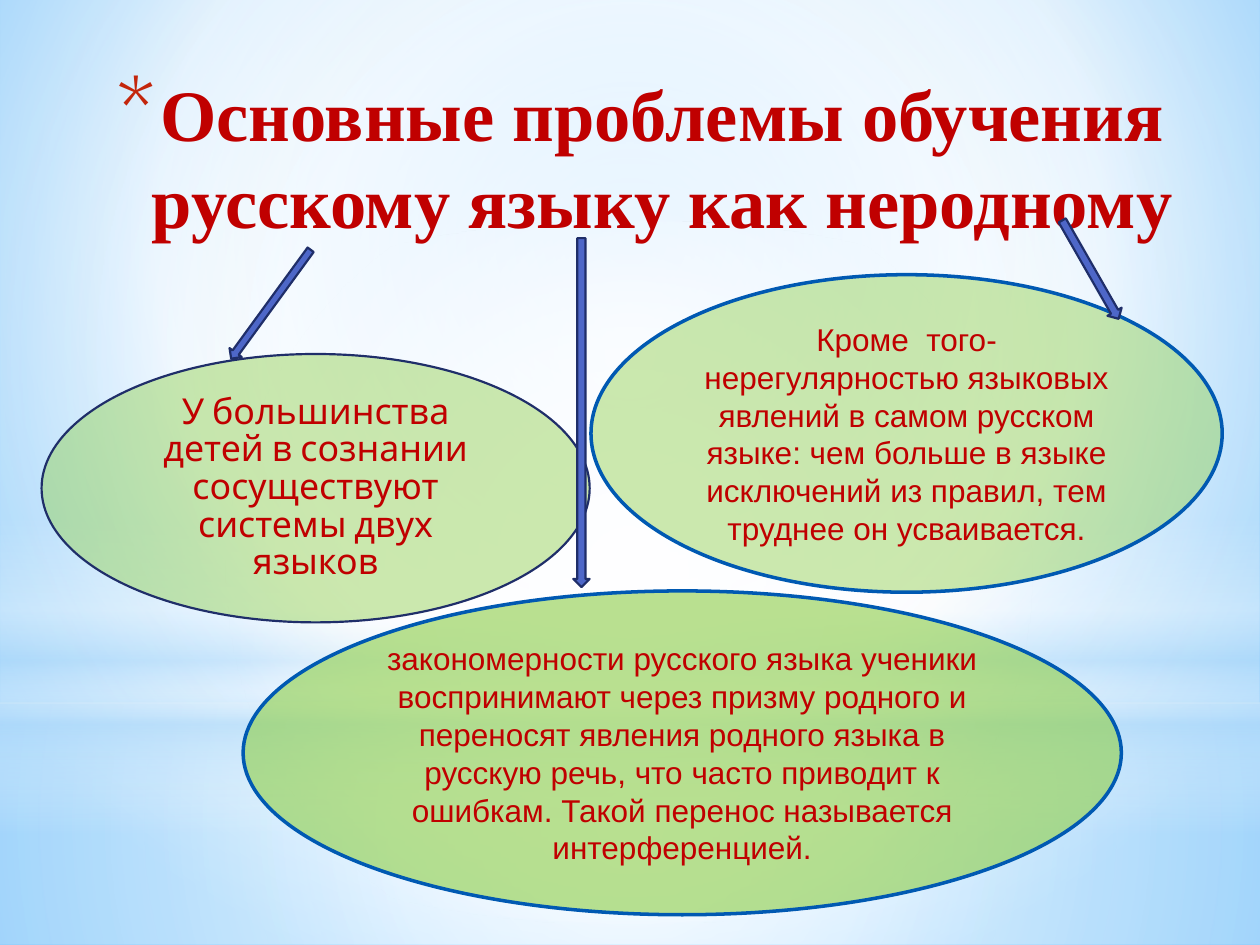
from lxml import etree
from pptx import Presentation
from pptx.dml.color import RGBColor
from pptx.enum import shapes, text
from pptx.oxml import parse_xml
from pptx.oxml.ns import nsdecls, qn
from pptx.util import Inches, Pt

RED = RGBColor(0xC0, 0x00, 0x00)
BULLET_RED = RGBColor(0xC3, 0x26, 0x0C)
GREEN = RGBColor(0x92, 0xD0, 0x50)
NAVY = RGBColor(0x1F, 0x2E, 0x69)
BLUE = RGBColor(0x00, 0x59, 0xB2)
ARROW_BLUE = RGBColor(0x4E, 0x67, 0xC8)
WHITE = RGBColor(0xFF, 0xFF, 0xFF)
PALE_BLUE = RGBColor(0xB4, 0xDC, 0xFA)
SKY = RGBColor(0x9E, 0xD5, 0xFF)
DEEP_SKY = RGBColor(0x5B, 0xB9, 0xFF)

CENTRE = (50, 50, 50, 50)
RECTANGLE = shapes.MSO_SHAPE.RECTANGLE
OVAL = shapes.MSO_SHAPE.OVAL
BACKDROP = [
    (RECTANGLE, (0, 5.58, 10, 1.92),
     [(0, WHITE, 91), (37, WHITE, 76), (100, PALE_BLUE, 79)], CENTRE),
    (RECTANGLE, (0, 0, 10, 5.58),
     [(0, WHITE, 89), (48, WHITE, 62), (100, PALE_BLUE, 79)], CENTRE),
    (RECTANGLE, (0, 4.12, 10, 2.5),
     [(0, WHITE, 0), (29, WHITE, 30), (45, PALE_BLUE, 40),
      (55, WHITE, 26), (65, PALE_BLUE, 60), (100, WHITE, 0)], None),
    (OVAL, (0, 1.75, 10, 5.58), [(0, WHITE, 100), (56, WHITE, 0)], CENTRE),
]
TITLE = "Основные проблемы обучения русскому языку как неродному"
PROBLEMS = [
    ((0.33, 2.81, 4.35, 2.13), 46, NAVY, 1.25, "Cabin", 20.4, 0.88,
     "У большинства детей в сознании сосуществуют системы двух языков"),
    ((4.69, 2.18, 5.01, 2.52), 46, BLUE, 2, "Arial", 18, 1.0,
     "Кроме  того- нерегулярностью языковых явлений в самом русском языке: "
     "чем больше в языке исключений из правил, тем труднее он усваивается."),
    ((1.93, 4.69, 6.97, 2.57), 63, BLUE, 2, "Arial", 18, 1.0,
     "закономерности русского языка ученики воспринимают через призму родного "
     "и переносят явления родного языка в русскую речь, что часто приводит к "
     "ошибкам. Такой перенос называется интерференцией."),
]
ARROWS = [
    ((2.09, 1.88, 0.12, 1.07), 36.1),
    ((8.59, 1.69, 0.13, 0.9), 330.2),
    ((4.55, 1.89, 0.13, 2.77), 0),
]


def gradient(stops, focus):
    """Return a gradient fill, circular around focus or vertical without one."""
    stop_xml = "".join(
        f'<a:gs pos="{position * 1000}"><a:srgbClr val="{color}">'
        f'<a:alpha val="{alpha * 1000}"/></a:srgbClr></a:gs>'
        for position, color, alpha in stops)
    if focus:
        left, top, right, bottom = (side * 1000 for side in focus)
        direction = (f'<a:path path="circle"><a:fillToRect l="{left}" t="{top}" '
                     f'r="{right}" b="{bottom}"/></a:path>')
    else:
        direction = '<a:lin ang="5400000" scaled="0"/>'
    return parse_xml(f'<a:gradFill {nsdecls("a")} rotWithShape="1">'
                     f'<a:gsLst>{stop_xml}</a:gsLst>{direction}</a:gradFill>')


def replace_solid(properties, fill):
    """Swap the solid fill of a properties element for another fill."""
    properties.replace(properties.find(qn("a:solidFill")), fill)


def add_filled(slide, kind, box, color):
    """Add a shadowless shape with a solid fill."""
    shape = slide.shapes.add_shape(kind, *(Inches(value) for value in box))
    shape.shadow.inherit = False
    shape.fill.solid()
    shape.fill.fore_color.rgb = color
    return shape


def set_line(shape, color, width):
    """Set the outline of a shape."""
    shape.line.color.rgb = color
    shape.line.width = Pt(width)


def set_text(shape, content, font, size):
    """Write centred red text and return its paragraph."""
    shape.text_frame.text = content
    shape.text_frame.word_wrap = True
    paragraph = shape.text_frame.paragraphs[0]
    paragraph.alignment = text.PP_ALIGN.CENTER
    run_font = paragraph.runs[0].font
    run_font.name, run_font.size, run_font.color.rgb = font, Pt(size), RED
    return paragraph


def add_backdrop(slide):
    """Paint the background and its translucent glows."""
    slide.background.fill.solid()
    replace_solid(slide.element.xpath(".//p:bgPr")[0], gradient(
        [(0, SKY, 100), (60, WHITE, 100), (100, DEEP_SKY, 100)], (20, 10, 20, 60)))
    for kind, box, stops, focus in BACKDROP:
        shape = add_filled(slide, kind, box, WHITE)
        shape.line.fill.background()
        replace_solid(shape.element.spPr, gradient(stops, focus))


def set_title(slide):
    """Place the bulleted title in front of the backdrop."""
    title = slide.shapes.title
    slide.shapes.element.append(title.element)
    title.left, title.top = Inches(0.33), Inches(0.5)
    title.width, title.height = Inches(9.5), Inches(1.75)
    paragraph = set_text(title, TITLE, "Times New Roman", 41.4)
    paragraph.runs[0].font.bold = True
    title.text_frame.vertical_anchor = text.MSO_ANCHOR.TOP
    properties = paragraph._p.get_or_add_pPr()
    properties.set("marL", str(Inches(0.35)))
    properties.set("indent", str(-Inches(0.35)))
    bullet_color = etree.SubElement(properties, qn("a:buClr"))
    etree.SubElement(bullet_color, qn("a:srgbClr"), val=str(BULLET_RED))
    etree.SubElement(properties, qn("a:buSzPct"), val="128000")
    etree.SubElement(properties, qn("a:buFont"), typeface="Cabin")
    etree.SubElement(properties, qn("a:buChar"), char="*")


def add_problem(slide, box, alpha, line_color, line_width, font, size, spacing, content):
    """Add a translucent ellipse describing one problem."""
    ellipse = add_filled(slide, OVAL, box, GREEN)
    color = ellipse.element.spPr.find(qn("a:solidFill"))[0]
    etree.SubElement(color, qn("a:alpha"), val=str(alpha * 1000))
    set_line(ellipse, line_color, line_width)
    paragraph = set_text(ellipse, content, font, size)
    paragraph.line_spacing = spacing
    ellipse.text_frame.vertical_anchor = text.MSO_ANCHOR.MIDDLE


def add_arrow(slide, box, rotation):
    """Add a block arrow leading from the title to a problem."""
    arrow = add_filled(slide, shapes.MSO_SHAPE.DOWN_ARROW, box, ARROW_BLUE)
    arrow.rotation = rotation
    set_line(arrow, NAVY, 1.25)


def main():
    """Build and save the slide."""
    presentation = Presentation()
    presentation.slide_width, presentation.slide_height = Inches(10), Inches(7.5)
    slide = presentation.slides.add_slide(presentation.slide_layouts[5])
    add_backdrop(slide)
    set_title(slide)
    for problem in PROBLEMS:
        add_problem(slide, *problem)
    for arrow in ARROWS:
        add_arrow(slide, *arrow)
    presentation.save("out.pptx")


if __name__ == "__main__":
    main()
